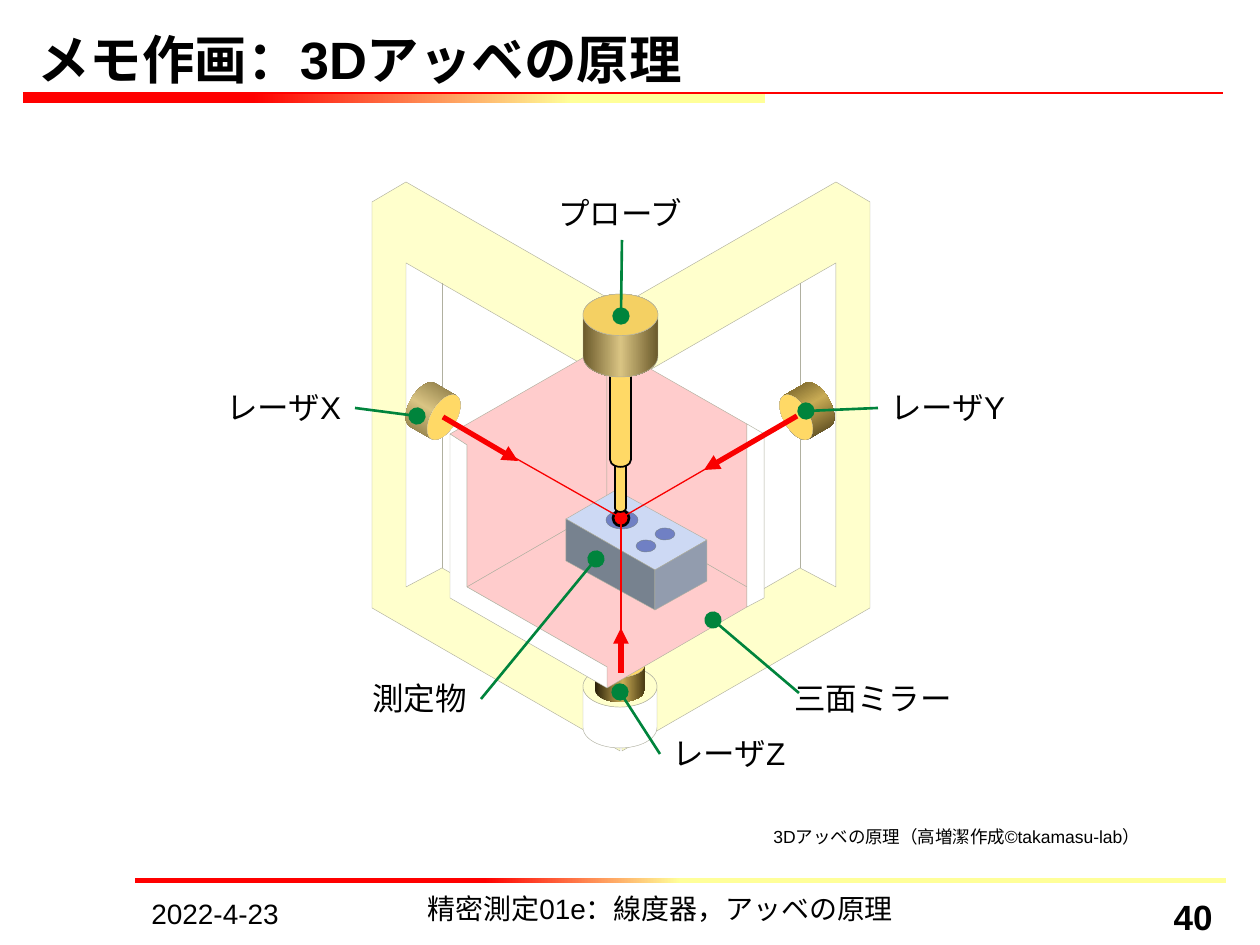
from dataclasses import dataclass
from lxml import etree
from pptx import Presentation
from pptx import util as u
from pptx.dml.color import RGBColor
from pptx.enum import shapes, text
from pptx.oxml.ns import qn


@dataclass(frozen=True)
class Theme:
    font: str = "Arial"
    ink: str = "000000"
    red: str = "FF0000"
    beam: str = "F90000"
    yellow: str = "FFFF99"
    frame: str = "FFFFCC"
    white: str = "FFFFFF"
    edge: str = "B0B0A0"
    gold: str = "FFD966"
    mirror: str = "FFCCCC"
    hole: str = "7080C4"
    leader: str = "00843C"
    block: tuple = ("CDD9F4", "77828F", "929CAE")
    metal: tuple = ((0, "6B5A2B"), (50, "D9C483"), (100, "6B5A2B"))
    dark: tuple = ((0, "2A2008"), (55, "C9AC55"), (100, "4A3B14"))
    title: int = 30
    label: int = 18
    footer: int = 16
    number: int = 20
    caption: int = 10


T = Theme()
PX = 914400 / 126
K = shapes.MSO_SHAPE
AL = text.PP_ALIGN


def px(n):
    return u.Emu(round(n * PX))


def paint(sp, fill, line=None, width=0.25):
    sp.shadow.inherit = False
    if isinstance(fill, str):
        sp.fill.solid()
        sp.fill.fore_color.rgb = RGBColor.from_string(fill)
    else:
        sp.fill.gradient()
        sp.fill.gradient_angle = 0
        gs = sp._element.spPr.find(qn("a:gradFill")).find(qn("a:gsLst"))
        for old in list(gs):
            gs.remove(old)
        for pos, color in fill:
            stop = etree.SubElement(gs, qn("a:gs"), pos=str(pos * 1000))
            etree.SubElement(stop, qn("a:srgbClr"), val=color)
    if line:
        sp.line.color.rgb = RGBColor.from_string(line)
        sp.line.width = u.Pt(width)
    else:
        sp.line.fill.background()
    return sp


def shape(s, kind, x, y, w, h, fill, line=None, width=0.25):
    sp = s.shapes.add_shape(kind, px(x), px(y), px(w), px(h))
    return paint(sp, fill, line, width)


def face(s, x, y, pts, fill):
    pts = [(x + a, y + b) for a, b in pts]
    fb = s.shapes.build_freeform(*pts[0], scale=PX)
    fb.add_line_segments(pts[1:], close=True)
    return paint(fb.convert_to_shape(), fill, T.edge)


def line(s, start, end, color, width, tip=None, size="med"):
    c = s.shapes.add_connector(shapes.MSO_CONNECTOR.STRAIGHT, *map(px, (*start, *end)))
    c.line.color.rgb = RGBColor.from_string(color)
    c.line.width = u.Pt(width)
    sppr = c._element.spPr
    if tip:
        etree.SubElement(sppr.find(qn("a:ln")), qn("a:tailEnd"), type=tip, w=size, len=size)
    etree.SubElement(sppr, qn("a:effectLst"))
    return c


def label(s, x, y, w, h, words, size, bold=False, align=AL.LEFT, anchor=text.MSO_ANCHOR.TOP, pad=6):
    sp = s.shapes.add_textbox(*map(px, (x, y, w, h)))
    tf = sp.text_frame
    frame = dict(word_wrap=True, auto_size=text.MSO_AUTO_SIZE.NONE, vertical_anchor=anchor,
                 margin_top=px(pad), margin_bottom=px(pad))
    for k, v in frame.items():
        setattr(tf, k, v)
    p = tf.paragraphs[0]
    p.alignment = align
    r = p.add_run()
    r.text = words
    for k, v in dict(name=T.font, size=u.Pt(size), bold=bold).items():
        setattr(r.font, k, v)
    r.font.color.rgb = RGBColor.from_string(T.ink)
    return sp


def cylinder(s, x, y, w, h, body, lid, line_color=None, turn=0):
    can = shape(s, K.CAN, x, y, w, h, body, line_color)
    can.adjustments[0] = 0.5 * h / min(w, h)
    can.rotation = turn
    dx, dy = {0: (0, -1), 120: (0.87, 0.5), 240: (-0.87, 0.5)}[turn]
    top = shape(s, K.OVAL, x + dx * h / 4, y + h / 4 + dy * h / 4, w, h / 2, lid, line_color)
    top.rotation = turn


def header(s, x, y, w, h):
    label(s, x + 2, y, w, 64, "メモ作画：3Dアッベの原理", T.title, True,
          anchor=text.MSO_ANCHOR.BOTTOM, pad=0)
    shape(s, K.RECTANGLE, x, y + h - 10, 742, 10, ((31, T.red), (74, T.yellow)))
    line(s, (x, y + h - 10), (x + w, y + h - 10), T.red, 0.75)


def footer(s, x, y, w, h):
    shape(s, K.RECTANGLE, x, y, w, 5, ((32, T.red), (50, T.yellow)))
    label(s, x + 4, y + 13, 178, h - 13, "2022-4-23", T.footer)
    label(s, x + 198, y + 11, 655, h - 11, "精密測定01e：線度器，アッベの原理", T.footer,
          align=AL.CENTER, pad=3)
    label(s, x + w - 209, y + 12, 208, h - 12, "40", T.number, True, AL.RIGHT)


def frame(s, x, y, w):
    half = [(0, 20), (34, 0), (248, 123), (248, 204), (34, 81),
            (34, 405), (70, 386), (248, 488), (248, 569), (0, 426)]
    for side in (lambda a: a, lambda a: w - a):
        face(s, x, y, [(side(a), b) for a, b in half], T.frame)
        line(s, (x + side(70), y + 101), (x + side(70), y + 386), T.edge, 0.25)
    cylinder(s, x + 211, y + 484, 74, 82, T.white, T.frame, T.edge)


def emitters(s, x, y, w, d):
    cylinder(s, x, y, d, d, T.metal, T.gold, turn=120)
    cylinder(s, x + w - d, y, d, d, T.dark, T.gold, turn=240)
    cylinder(s, x + (w - d) / 2, y + 266, d, d, T.dark, T.gold)


def mirrors(s, x, y):
    for pts, fill in (
        ([(0, 90), (157, 0), (157, 162), (17, 243), (17, 101)], T.mirror),
        ([(157, 0), (297, 80), (297, 243), (157, 162)], T.mirror),
        ([(17, 243), (157, 162), (297, 243), (297, 263), (157, 344), (157, 323)], T.mirror),
        ([(0, 90), (17, 101), (17, 243), (157, 323), (157, 344), (0, 254)], T.white),
        ([(297, 80), (314, 90), (314, 254), (297, 263)], T.white),
    ):
        face(s, x, y, pts, fill)


def workpiece(s, x, y):
    top = [(0, 29), (50, 0), (141, 50), (89, 80)]
    left = [(0, 29), (89, 80), (89, 120), (0, 71)]
    right = [(89, 80), (141, 50), (141, 91), (89, 120)]
    for pts, fill in zip((top, left, right), T.block):
        face(s, x, y, pts, fill)
    for a, b, w, h in ((40, 21, 32, 18), (89, 38, 20, 12), (70, 50, 20, 12)):
        shape(s, K.OVAL, x + a, y + b, w, h, T.hole, T.block[1])


def probe(s, x, y):
    shape(s, K.OVAL, x + 30, y + 216, 16, 16, T.red, T.ink, 1.5)
    for a, b, w, h in ((32, 133, 11, 85), (27, 61, 21, 112)):
        rod = shape(s, K.CAN, x + a, y + b, w, h, T.gold, T.ink, 1)
        rod.adjustments[0] = 0.7
    cylinder(s, x, y, 75, 83, T.metal, "F4D063", T.edge)


def beams(s, x, y):
    for start, tip in (((-178, -101), (-103, -57)), ((176, -102), (83, -48)), ((0, 155), (0, 110))):
        a = (x + start[0], y + start[1])
        line(s, a, (x, y), T.beam, 0.75)
        line(s, a, (x + tip[0], y + tip[1]), T.beam, 3, "triangle")


def callouts(s, x, y):
    for words, a, b, w, side, dot in (
        ("プローブ", 332, 0, 152, 2, (407, 128)),
        ("レーザX", 0, 194, 141, 3, (203, 228)),
        ("レーザY", 664, 194, 141, 1, (592, 223)),
        ("測定物", 146, 485, 121, 3, (382, 371)),
        ("三面ミラー", 568, 485, 184, None, (499, 432)),
        ("レーザZ", 446, 540, 140, 1, (406, 504)),
    ):
        box = label(s, x + a, y + b, w, 52, words, T.label)
        start = (x + a + 17, y + b + 20)
        c = line(s, start, (x + dot[0], y + dot[1]), T.leader, 1.5, "oval", "lg")
        if side is not None:
            c.begin_connect(box, side)


def main():
    prs = Presentation()
    prs.slide_width, prs.slide_height = u.Inches(10), u.Inches(7.5)
    s = prs.slides.add_slide(prs.slide_layouts[6])
    header(s, 23, 26, 1200, 77)
    frame(s, 372, 182, 498)
    emitters(s, 408, 386, 424, 50)
    mirrors(s, 450, 344)
    workpiece(s, 566, 490)
    probe(s, 583, 294)
    beams(s, 621, 518)
    callouts(s, 214, 188)
    label(s, 761, 820, 420, 34, "3Dアッベの原理（高増潔作成©takamasu-lab）", T.caption)
    footer(s, 135, 878, 1091, 52)
    prs.save("out.pptx")


if __name__ == "__main__":
    main()
